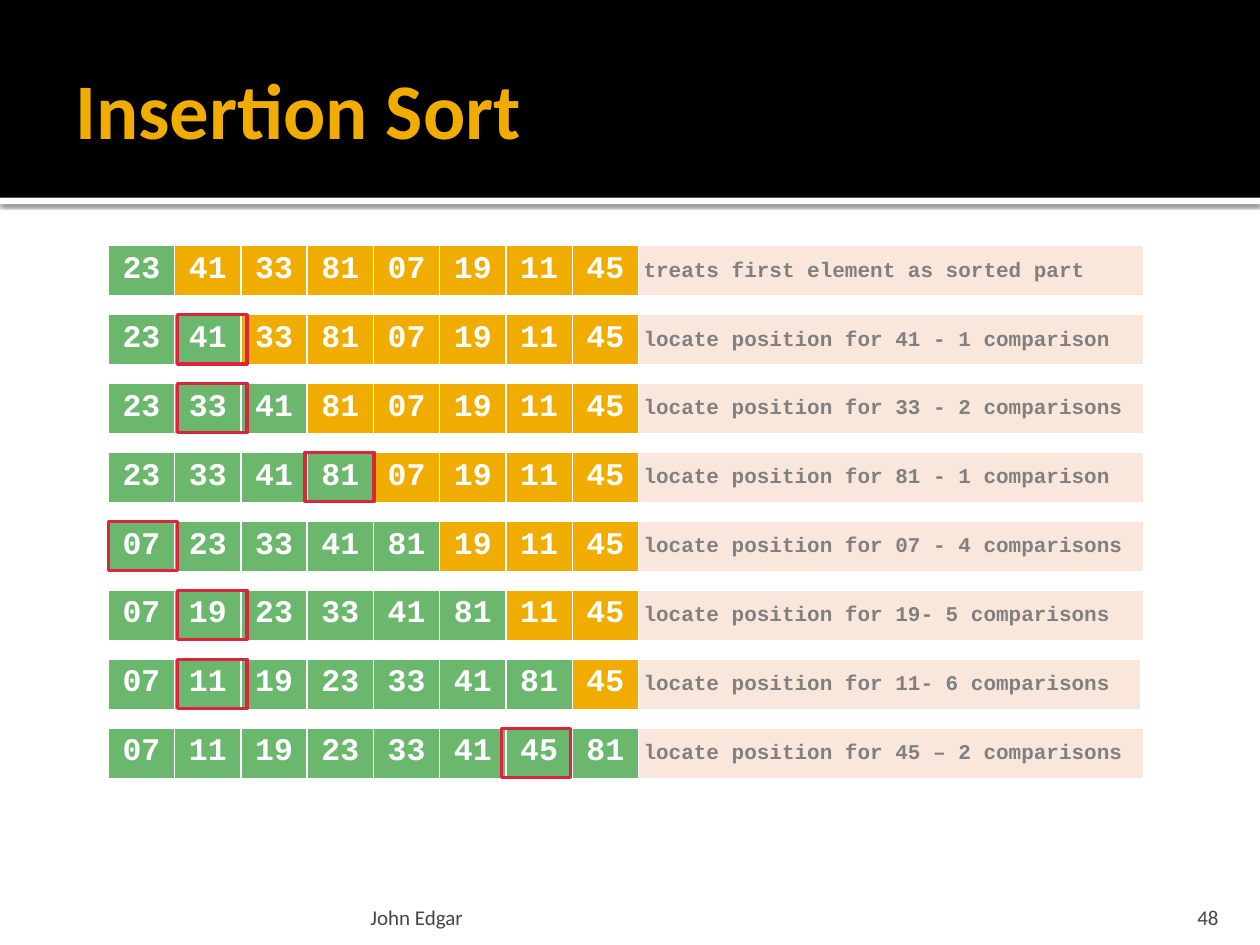
from lxml.etree import SubElement
from pptx import Presentation
from pptx.dml.color import RGBColor
from pptx.enum.shapes import MSO_SHAPE
from pptx.enum.text import MSO_ANCHOR, PP_ALIGN
from pptx.oxml import parse_xml
from pptx.oxml.ns import nsdecls, qn
from pptx.util import Inches, Pt

COLORS = {
    "white": "FFFFFF",
    "black": "000000",
    "gold": "F0AD00",
    "green": "6BB76D",
    "peach": "FAE7DC",
    "gray": "808080",
    "dark": "454545",
    "red": "D9253E",
}
VALUES = ["23", "41", "33", "81", "07", "19", "11", "45"]
NOTES = [
    "treats first element as sorted part",
    "locate position for 41 - 1 comparison",
    "locate position for 33 - 2 comparisons",
    "locate position for 81 - 1 comparison",
    "locate position for 07 - 4 comparisons",
    "locate position for 19- 5 comparisons",
    "locate position for 11- 6 comparisons",
    "locate position for 45 – 2 comparisons",
]
LEFT, TOP, HEIGHT = 0.86, 1.95, 0.41
CELL = 4.21 / len(VALUES)
STEP = (5.78 - TOP) / (len(VALUES) - 1)
MARKS = {0: 0.86, 1: 1.41, 3: 2.42, 6: 3.98}


def color(name):
    return RGBColor.from_string(COLORS[name])


def paint(item, name):
    item.fill.solid()
    item.fill.fore_color.rgb = color(name)


def style(par, size, name, face, bold=False, align=PP_ALIGN.LEFT):
    font = par.font
    font.size, font.name, font.bold = Pt(size), face, bold
    font.color.rgb = color(name)
    par.alignment = align


def add_box(slide, x, y, w, h):
    box = slide.shapes.add_shape(
        MSO_SHAPE.RECTANGLE, Inches(x), Inches(y), Inches(w), Inches(h))
    box.shadow.inherit = False
    return box


def add_band(slide, y, h, name):
    band = add_box(slide, 0, y, 10, h)
    paint(band, name)
    band.line.fill.background()
    return band


def add_glow(band):
    effects = band.element.spPr.find(qn("a:effectLst"))
    glow = SubElement(effects, qn("a:outerShdw"), blurRad=str(Pt(2.5)),
                      dist=str(Pt(0.8)), dir="5400000", rotWithShape="0")
    shade = SubElement(glow, qn("a:srgbClr"), val=COLORS["black"])
    SubElement(shade, qn("a:alpha"), val="60000")


def add_label(slide, area, text, margins, anchor, **look):
    frame = slide.shapes.add_textbox(*map(Inches, area)).text_frame
    frame.word_wrap = True
    frame.vertical_anchor = anchor
    (frame.margin_left, frame.margin_top,
     frame.margin_right, frame.margin_bottom) = map(Inches, margins)
    par = frame.paragraphs[0]
    par.text = text
    style(par, face="Calibri", **look)


def add_edges(cell):
    props = cell._tc.get_or_add_tcPr()
    for side, width in zip("LRTB", (1, 1, 1, 3)):
        props.append(parse_xml(
            f'<a:ln{side} {nsdecls("a")} w="{Pt(width)}"><a:solidFill>'
            f'<a:srgbClr val="{COLORS["white"]}"/></a:solidFill></a:ln{side}>'))


def fill_cell(cell, text, fill, **look):
    add_edges(cell)
    paint(cell, fill)
    cell.margin_left = cell.margin_right = Inches(0.04)
    cell.margin_top = cell.margin_bottom = Inches(0.05)
    par = cell.text_frame.paragraphs[0]
    par.text = text
    style(par, face="Courier New", bold=True, **look)


def add_step(slide, index):
    count = index + 1
    order = sorted(VALUES[:count]) + VALUES[count:]
    wide = 3.99 if index == 6 else 4.01
    widths = [CELL] * len(order) + [wide]
    y = TOP + index * STEP
    table = slide.shapes.add_table(
        1, len(widths), Inches(LEFT), Inches(y),
        Inches(sum(widths)), Inches(HEIGHT)).table
    table.first_row = table.horz_banding = False
    for col, width in zip(table.columns, widths):
        col.width = Inches(width)
    for spot, value in enumerate(order):
        fill_cell(table.cell(0, spot), value,
                  "green" if spot < count else "gold",
                  size=18, name="white", align=PP_ALIGN.CENTER)
    note = table.cell(0, len(order))
    fill_cell(note, NOTES[index], "peach", size=12, name="gray")
    note.vertical_anchor = MSO_ANCHOR.MIDDLE


def add_mark(slide, index):
    spot = sorted(VALUES[:index + 1]).index(VALUES[index])
    mark = add_box(slide, MARKS[spot], TOP + index * STEP, 0.55, 0.39)
    mark.fill.background()
    mark.line.color.rgb = color("red")
    mark.line.width = Pt(2)


def main():
    deck = Presentation()
    deck.slide_width, deck.slide_height = Inches(10), Inches(7.5)
    slide = deck.slides.add_slide(deck.slide_layouts[6])
    add_glow(add_band(slide, 1.57, 0.05, "white"))
    add_band(slide, 0, 1.57, "black")
    add_label(slide, (0.5, 0.17, 9, 1.37), "Insertion Sort",
              (0.1, 0.05, 0.05, 0.05), MSO_ANCHOR.MIDDLE,
              size=45, name="gold", bold=True)
    add_label(slide, (2.89, 7.08, 6.02, 0.3), "John Edgar",
              (0.05, 0.05, 0.05, 0), MSO_ANCHOR.BOTTOM, size=12, name="dark")
    add_label(slide, (8.97, 7.08, 0.8, 0.3), "48",
              (0.1, 0.05, 0.1, 0), MSO_ANCHOR.BOTTOM,
              size=12, name="dark", align=PP_ALIGN.RIGHT)
    for index in range(len(VALUES)):
        add_step(slide, index)
    for index in range(1, len(VALUES)):
        add_mark(slide, index)
    deck.save("out.pptx")


if __name__ == "__main__":
    main()
